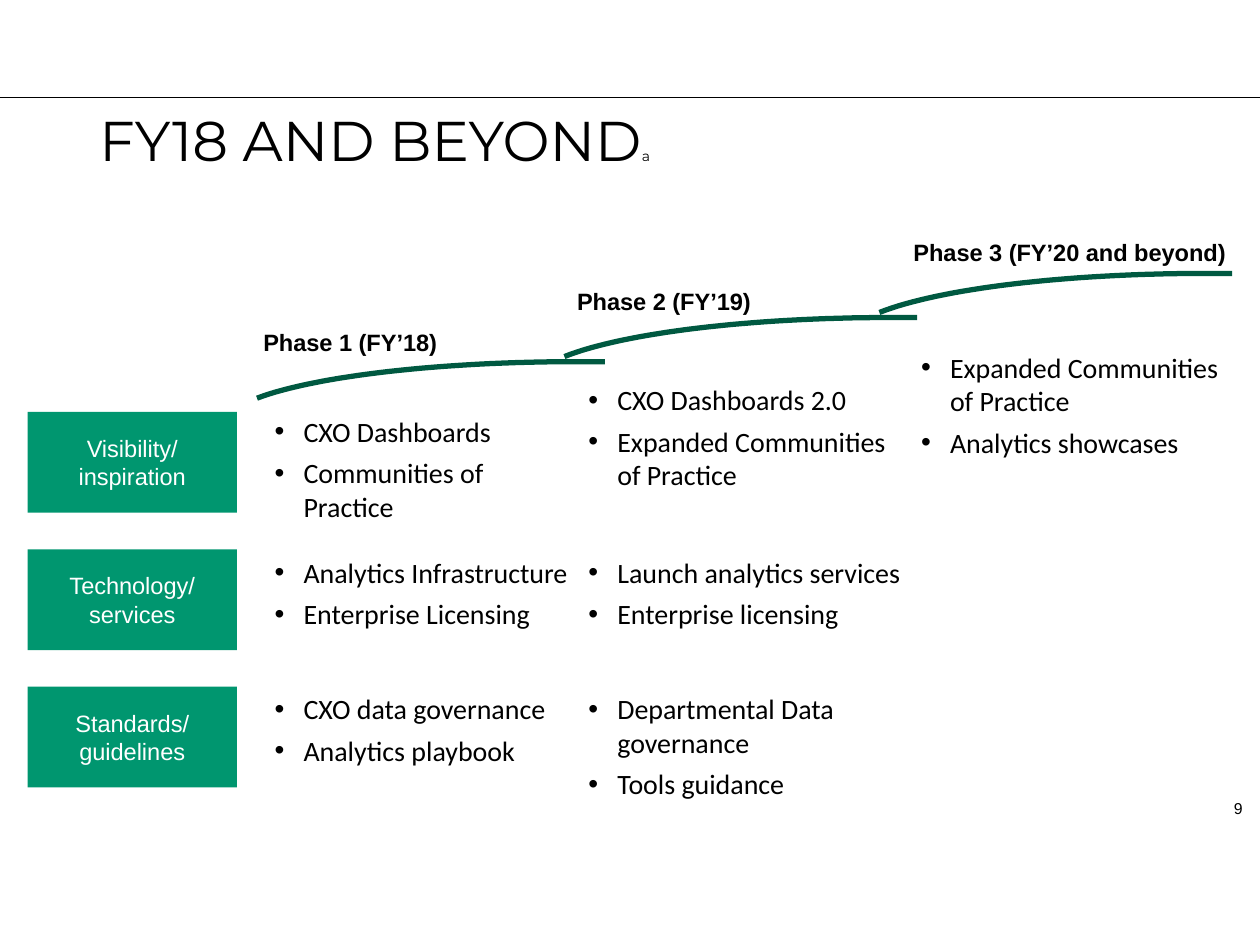
"""Build the three-phase roadmap slide for FY18 and beyond."""
from dataclasses import dataclass

from lxml import etree
from pptx import Presentation
from pptx import util as u
from pptx.dml.color import RGBColor
from pptx.enum import shapes, text
from pptx.oxml.ns import qn

Inches = u.Inches
ALIGN = text.PP_ALIGN
ANCHOR = text.MSO_ANCHOR


@dataclass(frozen=True)
class Theme:
    black: str = "000000"
    white: str = "FFFFFF"
    green: str = "00966F"
    dark: str = "005941"
    head: str = "Montserrat"
    label: str = "Arial"
    body: str = "Calibri"
    title: float = 32
    tiny: float = 8
    mid: float = 13.5
    item: float = 16
    page: float = 9


@dataclass(frozen=True)
class Box:
    left: float
    top: float
    width: float
    height: float

    def place(self) -> list:
        return [Inches(n) for n in (self.left, self.top, self.width, self.height)]


@dataclass(frozen=True)
class Phase:
    name: str
    box: Box
    arc: Box


@dataclass(frozen=True)
class Points:
    box: Box
    words: str


THEME = Theme()
ROW_TOP, ROW_STEP = 3.27, 1.09
ROWS = ["Visibility/ inspiration", "Technology/\nservices", "Standards/ guidelines"]
PHASES = [
    Phase("Phase 1 (FY’18)", Box(2.09, 2.6, 1.44, 0.23), Box(2.04, 2.87, 2.76, 0.29)),
    Phase("Phase 2 (FY’19)", Box(4.58, 2.27, 1.71, 0.23), Box(4.48, 2.52, 2.8, 0.31)),
    Phase("Phase 3 (FY’20 and beyond)", Box(7.25, 1.88, 2.57, 0.23), Box(6.98, 2.17, 2.8, 0.31)),
]
LISTS = [
    Points(Box(2.18, 3.24, 2.4, 0.98), "CXO Dashboards\nCommunities of Practice"),
    Points(Box(2.18, 4.36, 2.4, 0.71), "Analytics Infrastructure\nEnterprise Licensing"),
    Points(Box(2.18, 5.44, 2.4, 0.71), "CXO data governance\nAnalytics playbook"),
    Points(Box(4.67, 2.99, 2.4, 0.98), "CXO Dashboards 2.0\nExpanded Communities of Practice"),
    Points(Box(4.67, 4.36, 2.58, 0.71), "Launch analytics services\nEnterprise licensing"),
    Points(Box(4.67, 5.44, 2.58, 0.98), "Departmental Data governance\nTools guidance"),
    Points(Box(7.31, 2.73, 2.41, 1.32), "Expanded Communities of Practice\nAnalytics showcases"),
]


def style(run, size: float, face: str, color: str = THEME.black, bold: bool = False) -> None:
    """Set the font of one run."""
    font = run.font
    font.size, font.name, font.bold = u.Pt(size), face, bold
    font.color.rgb = RGBColor.from_string(color)


def fill_text(frame, words: str, size: float, face: str, color: str = THEME.black,
              bold: bool = False, align=ALIGN.LEFT) -> None:
    """Put words in a frame and format every run."""
    frame.text = words
    frame.word_wrap = True
    for para in frame.paragraphs:
        para.alignment = align
        for run in para.runs:
            style(run, size, face, color, bold)


def add_text(slide, box: Box, side: float = 0.1, edge: float = 0.05, anchor=ANCHOR.TOP):
    """Add an empty text box and return its frame."""
    frame = slide.shapes.add_textbox(*box.place()).text_frame
    frame.margin_left = frame.margin_right = Inches(side)
    frame.margin_top = frame.margin_bottom = Inches(edge)
    frame.vertical_anchor = anchor
    return frame


def add_rule(slide) -> None:
    """Draw the thin line across the slide."""
    line = slide.shapes.add_connector(
        shapes.MSO_CONNECTOR.STRAIGHT, 0, Inches(0.77), Inches(10), Inches(0.77))
    line.line.width = u.Pt(0.5)
    line.line.color.rgb = RGBColor.from_string(THEME.black)
    etree.SubElement(line._element.spPr, qn("a:effectLst"))


def add_title(slide) -> None:
    """Write the title and its small trailing letter."""
    frame = add_text(slide, Box(0.69, 0.83, 9.14, 0.62), anchor=ANCHOR.MIDDLE)
    fill_text(frame, "FY18 AND BEYOND", THEME.title, THEME.head)
    para = frame.paragraphs[0]
    para.line_spacing = 0.9
    run = para.add_run()
    run.text = "a"
    style(run, THEME.tiny, THEME.head)


def add_row(slide, words: str, top: float) -> None:
    """Draw one green row label."""
    box = Box(0.22, top, 1.66, 0.8)
    tile = slide.shapes.add_shape(shapes.MSO_SHAPE.RECTANGLE, *box.place())
    tile.shadow.inherit = False
    tile.fill.solid()
    tile.fill.fore_color.rgb = RGBColor.from_string(THEME.green)
    tile.line.fill.background()
    tile.text_frame.vertical_anchor = ANCHOR.MIDDLE
    fill_text(tile.text_frame, words, THEME.mid, THEME.label, THEME.white, align=ALIGN.CENTER)


def add_list(slide, points: Points) -> None:
    """Write one bulleted list."""
    frame = add_text(slide, points.box, side=0)
    fill_text(frame, points.words, THEME.item, THEME.body)
    for para in frame.paragraphs:
        para.space_after = u.Pt(4.5)
        props = para._p.get_or_add_pPr()
        props.set("marL", str(Inches(0.23)))
        props.set("indent", str(-Inches(0.23)))
        etree.SubElement(props, qn("a:buFont"), typeface=THEME.label)
        etree.SubElement(props, qn("a:buChar"), char="•")


def bend(t: float, a: float, b: float, c: float, d: float) -> float:
    """Return a cubic curve value at t."""
    s = 1 - t
    return a * s**3 + 3 * b * s * s * t + 3 * c * s * t * t + d * t**3


def add_arc(slide, box: Box, steps: int = 32) -> None:
    """Draw a rising curve that ends in a short flat run."""
    spots = [(box.left + box.width * bend(n / steps, 0, 0.17, 0.53, 0.925),
              box.top + box.height * bend(n / steps, 1, 0.39, 0, 0))
             for n in range(steps + 1)]
    spots.append((box.left + box.width, box.top))
    first, *rest = [(Inches(x), Inches(y)) for x, y in spots]
    pen = slide.shapes.build_freeform(*first)
    pen.add_line_segments(rest, close=False)
    arc = pen.convert_to_shape()
    arc.shadow.inherit = False
    arc.fill.background()
    arc.line.width = u.Pt(3)
    arc.line.color.rgb = RGBColor.from_string(THEME.dark)


def add_phase(slide, phase: Phase) -> None:
    """Write a phase name above its curve."""
    frame = add_text(slide, phase.box, side=0, edge=0, anchor=ANCHOR.BOTTOM)
    fill_text(frame, phase.name, THEME.mid, THEME.label, bold=True)
    add_arc(slide, phase.arc)


def main() -> None:
    """Build and save the slide."""
    deck = Presentation()
    deck.slide_width, deck.slide_height = Inches(10), Inches(7.5)
    slide = deck.slides.add_slide(deck.slide_layouts[6])
    add_rule(slide)
    add_title(slide)
    for n, words in enumerate(ROWS):
        add_row(slide, words, ROW_TOP + n * ROW_STEP)
    for points in LISTS:
        add_list(slide, points)
    for phase in PHASES:
        add_phase(slide, phase)
    page = add_text(slide, Box(9.31, 6.29, 0.65, 0.25))
    fill_text(page, "9", THEME.page, THEME.label, align=ALIGN.RIGHT)
    deck.save("out.pptx")


if __name__ == "__main__":
    main()
